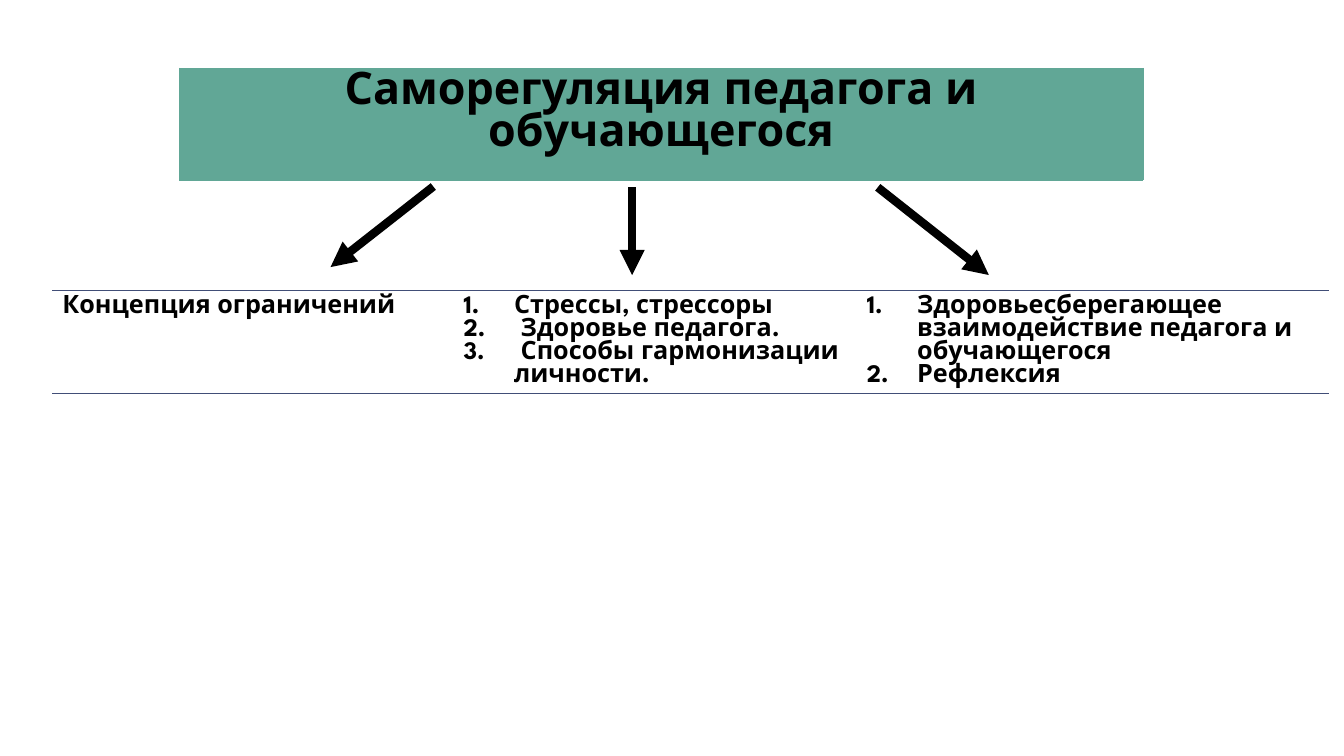
from dataclasses import dataclass

from lxml.etree import SubElement
from pptx import Presentation
from pptx.dml.color import RGBColor
from pptx.enum.shapes import MSO_CONNECTOR as Connector
from pptx.enum.text import PP_ALIGN as Align
from pptx.oxml.ns import qn
from pptx.util import Cm, Pt


@dataclass(frozen=True)
class Theme:
    font: str = "League Spartan"
    ink: str = "000000"
    banner: str = "61A796"
    rule: str = "414E77"
    title_size: float = 32
    body_size: float = 18
    arrow_width: float = 6
    banner_border: float = 0.5
    rule_width: float = 1


@dataclass(frozen=True)
class Topic:
    lines: tuple[str, ...]
    numbered: bool = False


@dataclass(frozen=True)
class TableSpec:
    left: float
    top: float
    widths: tuple[float, ...]
    height: float
    topics: tuple[Topic, ...]
    size: float
    border_sides: str
    border_color: str
    border_width: float
    fill: str | None = None
    align: Align = Align.LEFT


@dataclass(frozen=True)
class Arrow:
    start: tuple[float, float]
    end: tuple[float, float]


THEME = Theme()
NO_STYLE = "{2D5ABB26-0587-4C30-8999-92F81FD0307C}"
NUMBER_INDENT = Cm(1.27)

TITLE = TableSpec(
    4.52, 1.72, (24.28,), 2.82,
    (Topic(("Саморегуляция педагога и обучающегося",)),),
    THEME.title_size, "LRTB", THEME.banner, THEME.banner_border,
    THEME.banner, Align.CENTER,
)
TOPICS = TableSpec(
    1.32, 7.32, (10.11, 10.16, 11.91), 2.6,
    (
        Topic(("Концепция ограничений",)),
        Topic(("Стрессы, стрессоры", " Здоровье педагога.",
               " Способы гармонизации личности."), True),
        Topic(("Здоровьесберегающее взаимодействие педагога и обучающегося",
               "Рефлексия"), True),
    ),
    THEME.body_size, "TB", THEME.rule, THEME.rule_width,
)
ARROWS = (
    Arrow((15.93, 4.72), (15.93, 6.93)),
    Arrow((10.92, 4.7), (8.33, 6.73)),
    Arrow((22.12, 4.72), (24.92, 6.93)),
)


def set_borders(cell, spec: TableSpec) -> None:
    properties = cell._tc.get_or_add_tcPr()
    for side in "LRTB":
        border = SubElement(properties, qn(f"a:ln{side}"))
        if side in spec.border_sides:
            border.set("w", str(Pt(spec.border_width)))
            solid = SubElement(border, qn("a:solidFill"))
            SubElement(solid, qn("a:srgbClr")).set("val", spec.border_color)
        else:
            SubElement(border, qn("a:noFill"))


def add_number(para) -> None:
    properties = para._p.get_or_add_pPr()
    for name, value in {"marL": NUMBER_INDENT, "indent": -NUMBER_INDENT}.items():
        properties.set(name, str(value))
    SubElement(properties, qn("a:buFont")).set("typeface", THEME.font)
    SubElement(properties, qn("a:buAutoNum")).set("type", "arabicPeriod")


def fill_cell(cell, topic: Topic, spec: TableSpec) -> None:
    set_borders(cell, spec)
    if spec.fill:
        cell.fill.solid()
        cell.fill.fore_color.rgb = RGBColor.from_string(spec.fill)
    else:
        cell.fill.background()
    text_format = {"name": THEME.font, "size": Pt(spec.size), "bold": True}
    frame = cell.text_frame
    for index, line in enumerate(topic.lines):
        para = frame.add_paragraph() if index else frame.paragraphs[0]
        para.alignment = spec.align
        if topic.numbered:
            add_number(para)
        span = para.add_run()
        span.text = line
        for name, value in text_format.items():
            setattr(span.font, name, value)
        span.font.color.rgb = RGBColor.from_string(THEME.ink)


def draw_table(slide, spec: TableSpec) -> None:
    table = slide.shapes.add_table(
        1, len(spec.widths), Cm(spec.left), Cm(spec.top),
        Cm(sum(spec.widths)), Cm(spec.height),
    ).table
    table.first_row = table.horz_banding = False
    table._tbl.tblPr.find(qn("a:tableStyleId")).text = NO_STYLE
    for column, width in zip(table.columns, spec.widths):
        column.width = Cm(width)
    for cell, topic in zip(table.iter_cells(), spec.topics):
        fill_cell(cell, topic, spec)


def draw_arrow(slide, arrow: Arrow) -> None:
    points = (Cm(value) for value in arrow.start + arrow.end)
    connector = slide.shapes.add_connector(Connector.STRAIGHT, *points)
    connector.line.width = Pt(THEME.arrow_width)
    connector.line.color.rgb = RGBColor.from_string(THEME.ink)
    SubElement(connector.line._get_or_add_ln(), qn("a:tailEnd")).set("type", "triangle")
    SubElement(connector._element.spPr, qn("a:effectLst"))


def main() -> None:
    deck = Presentation()
    deck.slide_width, deck.slide_height = Cm(33.87), Cm(19.05)
    slide = deck.slides.add_slide(deck.slide_layouts[6])

    # Title banner
    draw_table(slide, TITLE)

    # Arrows from the banner to the topics
    for arrow in ARROWS:
        draw_arrow(slide, arrow)

    # Topics in three columns
    draw_table(slide, TOPICS)

    deck.save("out.pptx")


if __name__ == "__main__":
    main()
